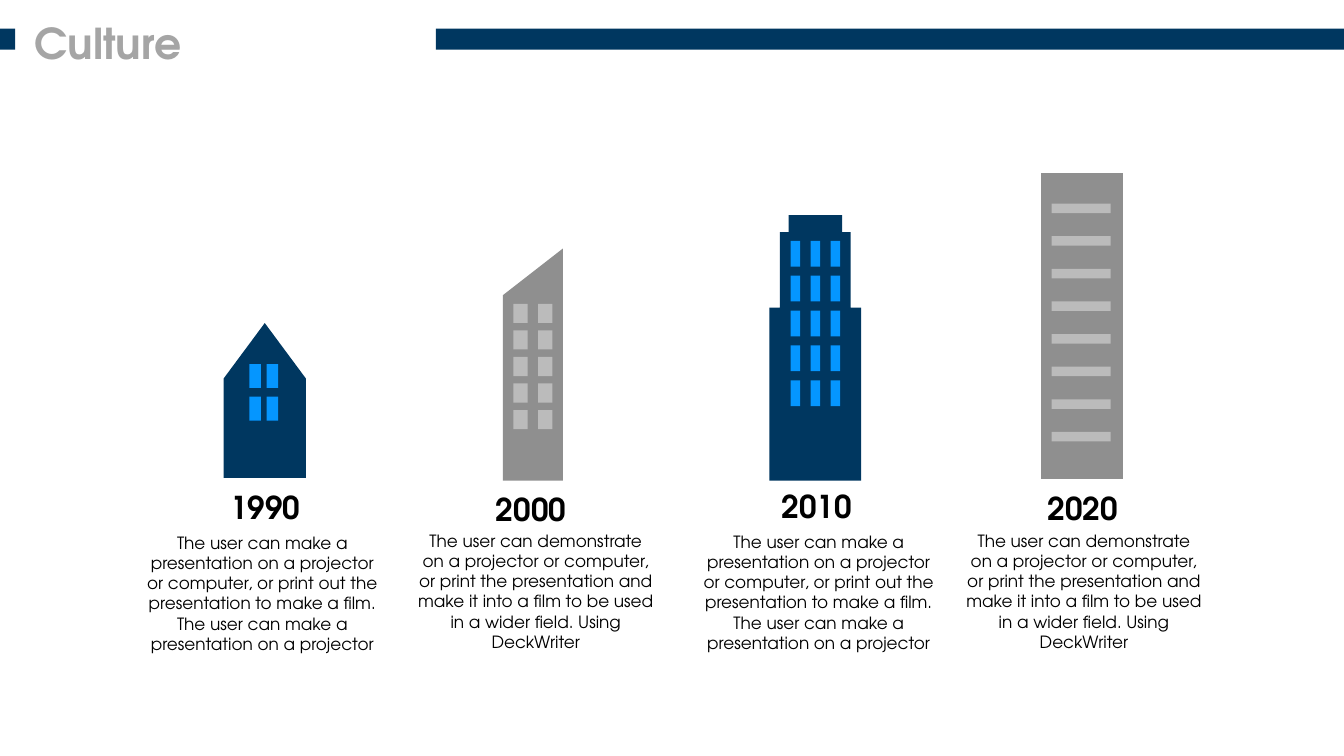
from pptx import Presentation
from pptx.dml.color import RGBColor
from pptx.enum.shapes import MSO_SHAPE
from pptx.enum.text import MSO_ANCHOR, MSO_AUTO_SIZE, PP_ALIGN
from pptx.util import Pt

RECT = MSO_SHAPE.RECTANGLE
TOP = MSO_ANCHOR.TOP
NO_FIT = MSO_AUTO_SIZE.NONE
LEFT, CENTER = PP_ALIGN.LEFT, PP_ALIGN.CENTER

PX = 9144  # 100 px to the inch
FONT = "TeX Gyre Adventor"
NAVY = RGBColor(0x00, 0x37, 0x60)
BLUE = RGBColor(0x05, 0x96, 0xFF)
GRAY = RGBColor(0x8F, 0x8F, 0x8F)
SILVER = RGBColor(0xBB, 0xBB, 0xBB)
TITLE_GRAY = RGBColor(0xA5, 0xA5, 0xA5)
BLACK = RGBColor(0x00, 0x00, 0x00)

FILM = ("The user can make a presentation on a projector or computer, or print "
        "out the presentation to make a film. The user can make a presentation "
        "on a projector")
FIELD = ("The user can demonstrate on a projector or computer, or print the "
         "presentation and make it into a film to be used in a wider field. "
         "Using DeckWriter")

# Outlines and window areas are relative to the top left of the building.
HOUSE = dict(
    outline=[(86, 162), (0, 162), (0, 58), (43, 0), (86, 58)],
    area=(27, 43, 30, 59), grid=(2, 2), pane=(12, 25), wall=NAVY, glass=BLUE)
SLANTED = dict(
    outline=[(63, 0), (0, 49), (0, 243), (63, 243)],
    area=(11, 58, 41, 131), grid=(2, 5), pane=(15, 20), wall=GRAY, glass=SILVER)
TOWER = dict(
    outline=[(85, 97), (85, 18), (76, 18), (76, 0), (20, 0), (20, 18), (11, 18),
             (11, 97), (0, 97), (0, 278), (96, 278), (96, 97)],
    area=(22, 27, 52, 173), grid=(3, 5), pane=(10, 27), wall=NAVY, glass=BLUE)
OFFICE = dict(
    outline=[(0, 0), (0, 320), (86, 320), (86, 0)],
    area=(11, 32, 62, 249), grid=(1, 8), pane=(62, 10), wall=GRAY, glass=SILVER)

# year, year position, caption, caption box, building, building position
MILESTONES = [
    ("1990", (108, 506), FILM, (143, 552, 263, 138), HOUSE, (234, 338)),
    ("2000", (386, 508), FIELD, (427, 550, 267, 138), SLANTED, (526, 260)),
    ("2010", (685, 505), FILM, (724, 551, 265, 138), TOWER, (805, 225)),
    ("2020", (963, 507), FIELD, (1001, 550, 266, 138), OFFICE, (1089, 181)),
]


def emu(*lengths):
    return [round(v * PX) for v in lengths]


def paint(sp, color):
    sp.fill.solid()
    sp.fill.fore_color.rgb = color
    sp.line.fill.background()
    sp.shadow.inherit = False


def add_rect(shapes, x, y, w, h, color):
    paint(shapes.add_shape(RECT, *emu(x, y, w, h)), color)


def write(tf, text, size, color, bold, align):
    tf.text = text
    p = tf.paragraphs[0]
    p.alignment = align
    font = p.runs[0].font
    font.name, font.size, font.bold = FONT, Pt(size), bold
    font.color.rgb = color


def add_text(slide, x, y, w, h, text, size, bold=False):
    tf = slide.shapes.add_textbox(*emu(x, y, w, h)).text_frame
    tf.word_wrap = True
    write(tf, text, size, BLACK, bold, CENTER)


def add_windows(shapes, x, y, w, h, grid, pane, color):
    """Spread a grid of panes evenly over the given area."""
    cols, rows = grid
    pane_w, pane_h = pane
    step_x = (w - pane_w) / max(cols - 1, 1)
    step_y = (h - pane_h) / max(rows - 1, 1)
    for row in range(rows):
        for col in range(cols):
            add_rect(shapes, x + col * step_x, y + row * step_y,
                     pane_w, pane_h, color)


def add_building(slide, x, y, outline, area, grid, pane, wall, glass):
    shapes = slide.shapes.add_group_shape().shapes
    points = [emu(x + dx, y + dy) for dx, dy in outline]
    builder = shapes.build_freeform(*points[0])
    builder.add_line_segments(points[1:], close=True)
    paint(builder.convert_to_shape(), wall)
    dx, dy, w, h = area
    add_windows(shapes, x + dx, y + dy, w, h, grid, pane, glass)


def add_header(slide, x, y, w, h, text):
    add_rect(slide.shapes, 0, y + 12, 16, 22, NAVY)
    add_rect(slide.shapes, x + 420, y + 12, 951, 22, NAVY)
    title = slide.shapes.title
    title.left, title.top, title.width, title.height = emu(x, y, w, h)
    tf = title.text_frame
    tf.margin_left = tf.margin_right = tf.margin_top = tf.margin_bottom = 0
    tf.vertical_anchor = TOP
    tf.auto_size = NO_FIT
    tf.word_wrap = False
    write(tf, text, 32, TITLE_GRAY, True, LEFT)


def main():
    prs = Presentation()
    prs.slide_width, prs.slide_height = emu(1406, 791)
    slide = prs.slides.add_slide(prs.slide_layouts[5])
    add_header(slide, 36, 18, 156, 54, "Culture")
    for year, year_at, caption, caption_box, building, building_at in MILESTONES:
        add_building(slide, *building_at, **building)
        add_text(slide, *year_at, 339, 50, year, 23.7, bold=True)
        add_text(slide, *caption_box, caption, 12.7)
    prs.save("out.pptx")


if __name__ == "__main__":
    main()
